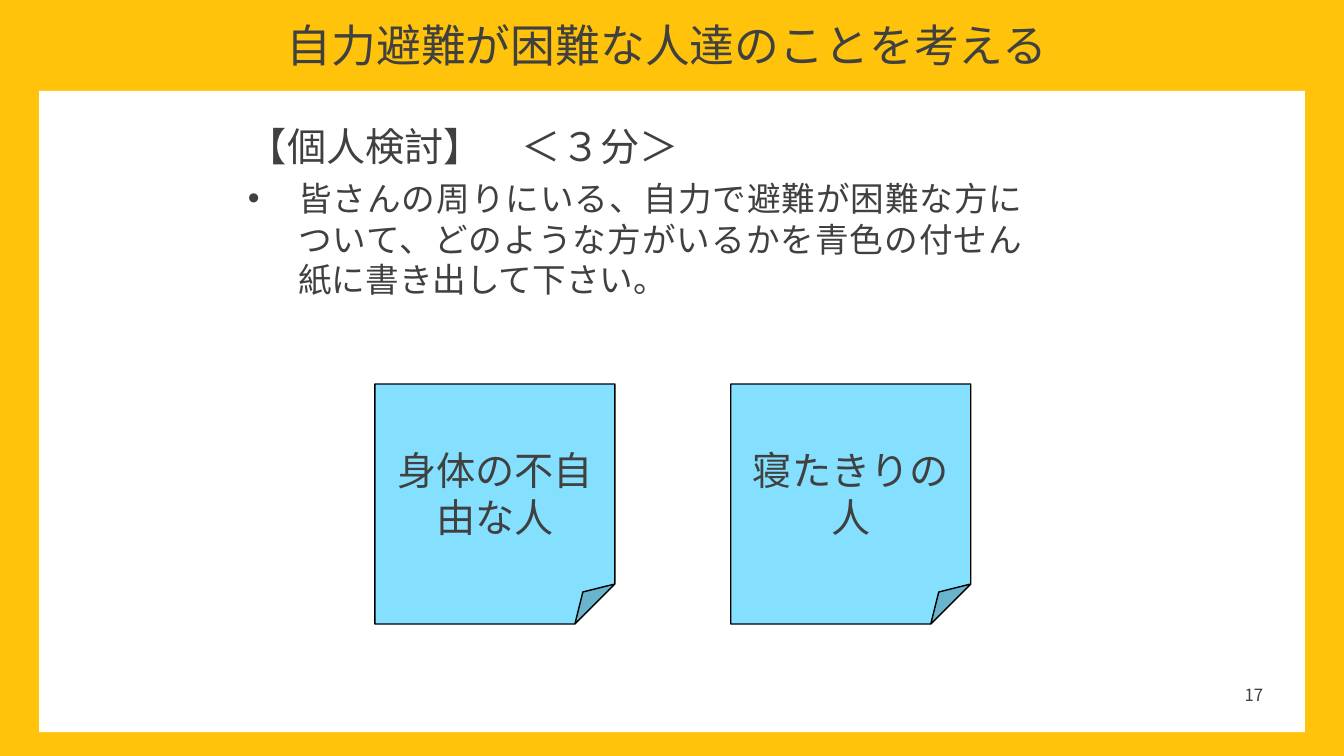
from dataclasses import dataclass

from lxml.etree import SubElement
from pptx import Presentation
from pptx.dml.color import RGBColor
from pptx.enum.shapes import MSO_SHAPE
from pptx.enum.text import MSO_ANCHOR, MSO_AUTO_SIZE, PP_ALIGN
from pptx.oxml.ns import qn
from pptx.util import Pt


@dataclass(frozen=True)
class Theme:
    font: str = "Noto Sans CJK JP"
    ink: str = "404040"
    frame: str = "FFC30C"
    panel: str = "FFFFFF"
    note: str = "85E0FF"
    edge: str = "000000"
    title: float = 32
    head: float = 28
    body: float = 24
    page: float = 12


@dataclass(frozen=True)
class Box:
    left: float
    top: float
    width: float
    height: float

    def place(self) -> tuple:
        return Pt(self.left), Pt(self.top), Pt(self.width), Pt(self.height)


@dataclass(frozen=True)
class Line:
    text: str
    size: float
    align: PP_ALIGN
    after: float = 0
    spacing: float = 1.0
    bullet: bool = False


THEME = Theme()
WIDE, HIGH = 960, 540
SIDE = 171.4
NOTE_LEFT, NOTE_TOP, NOTE_STEP = 267.8, 274.3, 254.2
NOTES = ("身体の不自由な人", "寝たきりの人")


def write(shape, lines: list[Line], anchor: MSO_ANCHOR,
          inset: tuple = (7.2, 3.6, 7.2, 3.6)) -> None:
    frame = shape.text_frame
    frame.word_wrap = True
    frame.auto_size = MSO_AUTO_SIZE.NONE
    frame.vertical_anchor = anchor
    (frame.margin_left, frame.margin_top,
     frame.margin_right, frame.margin_bottom) = map(Pt, inset)
    frame.text = "\n".join(line.text for line in lines)
    for para, line in zip(frame.paragraphs, lines):
        para.alignment = line.align
        para.line_spacing = line.spacing
        para.space_before = Pt(0)
        para.space_after = Pt(line.after)
        props = para._p.get_or_add_pPr()
        if line.bullet:
            props.set("marL", str(Pt(36)))
            props.set("indent", str(Pt(-36)))
            SubElement(props, qn("a:buFont"), typeface="Arial")
            SubElement(props, qn("a:buChar"), char="•")
        font = para.font
        font.name = THEME.font
        font.size = Pt(line.size)
        font.color.rgb = RGBColor.from_string(THEME.ink)
        # East Asian glyphs take their own typeface entry
        SubElement(props.find(qn("a:defRPr")), qn("a:ea"), typeface=THEME.font)


def draw(slide, kind: MSO_SHAPE, box: Box, fill: str, edge: str = ""):
    shape = slide.shapes.add_shape(kind, *box.place())
    shape.shadow.inherit = False
    shape.fill.solid()
    shape.fill.fore_color.rgb = RGBColor.from_string(fill)
    if edge:
        shape.line.color.rgb = RGBColor.from_string(edge)
        shape.line.width = Pt(1)
    else:
        shape.line.fill.background()
    return shape


def main() -> None:
    deck = Presentation()
    deck.slide_width, deck.slide_height = Pt(WIDE), Pt(HIGH)
    slide = deck.slides.add_slide(deck.slide_layouts[5])

    # Yellow frame and white panel
    draw(slide, MSO_SHAPE.RECTANGLE, Box(0, 0, WIDE, HIGH), THEME.frame)
    draw(slide, MSO_SHAPE.RECTANGLE, Box(28, 65, 904, 458), THEME.panel)

    # Page number
    page = slide.shapes.add_textbox(*Box(693.4, 481.7, 216, 28.8).place())
    write(page, [Line("17", THEME.page, PP_ALIGN.RIGHT)], MSO_ANCHOR.MIDDLE)

    # Title, raised above the frame
    title = slide.shapes.title
    slide.shapes.element.append(title.element)
    title.left, title.top, title.width, title.height = Box(131, 13.7, 691.2, 51.1).place()
    write(title, [Line("自力避難が困難な人達のことを考える", THEME.title,
                       PP_ALIGN.CENTER, spacing=0.9)], MSO_ANCHOR.TOP)

    # Task
    task = slide.shapes.add_textbox(*Box(170, 65, 567.4, 174.2).place())
    write(task, [
        Line("【個人検討】　＜３分＞", THEME.head, PP_ALIGN.JUSTIFY, after=6),
        Line("皆さんの周りにいる、自力で避難が困難な方について、"
             "どのような方がいるかを青色の付せん紙に書き出して下さい。",
             THEME.body, PP_ALIGN.JUSTIFY, bullet=True),
    ], MSO_ANCHOR.MIDDLE, (7.2, 2.9, 7.2, 5.8))

    # Sticky notes
    for i, text in enumerate(NOTES):
        box = Box(NOTE_LEFT + i * NOTE_STEP, NOTE_TOP, SIDE, SIDE)
        note = draw(slide, MSO_SHAPE.FOLDED_CORNER, box, THEME.note, THEME.edge)
        write(note, [Line(text, THEME.head, PP_ALIGN.CENTER)],
              MSO_ANCHOR.MIDDLE, (7.2, 17.3, 7.2, 3.6))

    deck.save("out.pptx")


if __name__ == "__main__":
    main()
